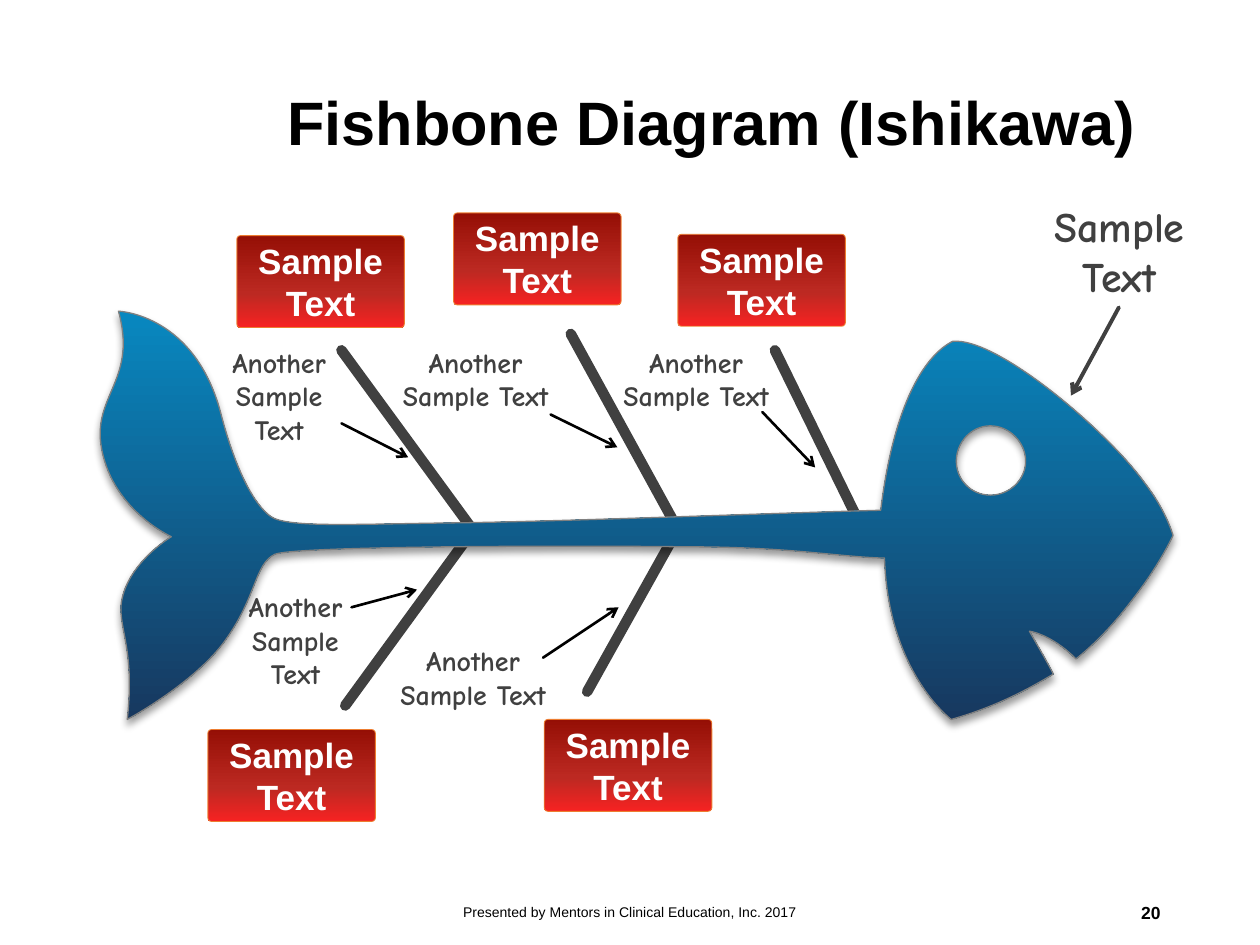
from typing import NamedTuple

from lxml import etree
from pptx import Presentation
from pptx.dml.color import RGBColor
from pptx.enum.shapes import MSO_CONNECTOR, MSO_SHAPE
from pptx.enum.text import MSO_ANCHOR, MSO_AUTO_SIZE, PP_ALIGN
from pptx.oxml.ns import qn
from pptx.util import Cm, Pt

STRAIGHT = MSO_CONNECTOR.STRAIGHT
ROUNDED = MSO_SHAPE.ROUNDED_RECTANGLE
TOP, MIDDLE = MSO_ANCHOR.TOP, MSO_ANCHOR.MIDDLE
LEFT, CENTER, RIGHT = PP_ALIGN.LEFT, PP_ALIGN.CENTER, PP_ALIGN.RIGHT
NO_AUTOFIT = MSO_AUTO_SIZE.NONE

CM_PER_INCH = 2.54
BLACK, WHITE, GREY = "000000", "FFFFFF", "404040"
HEADING_FONT, NOTE_FONT = "Arial", "Comic Neue"


class Stroke(NamedTuple):
    start: tuple
    end: tuple
    color: str = BLACK
    width: float = 1.5
    arrow: bool = True


class Cause(NamedTuple):
    left: float
    top: float
    width: float
    height: float
    arrow: Stroke


# Each outline: start point, then cubic curves as (control, control, end)
EYE = ((7.86, 3.38), [
    (7.71, 3.38, 7.59, 3.51, 7.59, 3.66), (7.59, 3.81, 7.71, 3.93, 7.86, 3.93),
    (8.01, 3.93, 8.14, 3.81, 8.14, 3.66), (8.14, 3.51, 8.01, 3.38, 7.86, 3.38)])
BODY = ((0.94, 2.47), [
    (0.94, 2.47, 1.56, 2.49, 1.76, 3.31), (1.87, 3.72, 2.01, 4, 2.15, 4.1),
    (2.28, 4.19, 2.8, 4.16, 3.61, 4.15), (4.42, 4.14, 6.22, 4.07, 6.99, 4.05),
    (7.1, 3.16, 7.36, 2.81, 7.56, 2.71), (7.91, 2.67, 8.8, 3.43, 9.09, 3.84),
    (9.26, 4.06, 9.31, 4.25, 9.31, 4.25), (9.31, 4.25, 9.21, 4.47, 9.01, 4.73),
    (8.89, 4.89, 8.74, 5.07, 8.54, 5.23), (8.34, 5.03, 8.17, 5.01, 8.17, 5.01),
    (8.17, 5.01, 8.31, 5.25, 8.36, 5.35), (8.13, 5.49, 7.87, 5.62, 7.55, 5.71),
    (7.55, 5.71, 7.05, 5.34, 7.02, 4.43), (6.65, 4.42, 6.27, 4.34, 5.46, 4.34),
    (4.65, 4.33, 2.34, 4.33, 2.18, 4.4), (2.02, 4.48, 2.04, 4.73, 1.79, 5.08),
    (1.55, 5.42, 1.01, 5.71, 1.01, 5.71), (1.07, 5.18, 0.95, 5, 0.96, 4.81),
    (0.99, 4.48, 1.36, 4.26, 1.36, 4.26), (1.36, 4.26, 0.87, 4.04, 0.8, 3.52),
    (0.75, 3.13, 1.09, 3, 0.94, 2.47)])

BONES = [((6.15, 2.78), (6.88, 4.27)), ((4.53, 2.65), (5.38, 4.2)),
         ((2.71, 2.78), (3.8, 4.27)), ((4.66, 5.49), (5.38, 4.2)),
         ((2.74, 5.6), (3.71, 4.27))]
CAUSES = [
    Cause(3.16, 2.74, 1.23, 0.54, Stroke((4.37, 3.29), (4.9, 3.55))),
    Cause(4.91, 2.74, 1.23, 0.54, Stroke((6.05, 3.27), (6.47, 3.71))),
    Cause(1.72, 2.74, 0.99, 0.81, Stroke((2.71, 3.36), (3.24, 3.63))),
    Cause(3.14, 5.11, 1.23, 0.54, Stroke((4.31, 5.22), (4.91, 4.82))),
    Cause(1.85, 4.68, 0.99, 0.81, Stroke((2.79, 4.82), (3.31, 4.68)))]
CATEGORY_CORNERS = [(1.88, 1.87), (3.6, 1.69), (5.38, 1.86), (1.65, 5.79), (4.32, 5.71)]
CATEGORY_SIZE = (1.33, 0.73)
RED_STOPS = [(0, "950F05"), (63, "BC2922"), (100, "F62222")]
BLUE_STOPS = [(0, "0888C0"), (100, "17385F")]


def lengths(*inches: float) -> list:
    return [Cm(value * CM_PER_INCH) for value in inches]


def rgb(value: str) -> RGBColor:
    return RGBColor.from_string(value)


def write(shape, text: str, *, size: float, color: str = BLACK, font: str = HEADING_FONT,
          bold: bool = False, align=CENTER, anchor=TOP, inset=None, spacing=None) -> None:
    frame = shape.text_frame
    frame.word_wrap = True
    frame.auto_size = NO_AUTOFIT
    frame.vertical_anchor = anchor
    if inset is not None:
        frame.margin_left = frame.margin_right = Cm(inset)
        frame.margin_top = frame.margin_bottom = Cm(inset)
    frame.text = text
    for paragraph in frame.paragraphs:
        paragraph.alignment = align
        if spacing:
            paragraph.line_spacing = spacing
        for run in paragraph.runs:
            run.font.name, run.font.size = font, Pt(size)
            run.font.bold, run.font.color.rgb = bold, rgb(color)


def add_label(slide, text: str, box: tuple, **text_format) -> None:
    write(slide.shapes.add_textbox(*lengths(*box)), text, **text_format)


def add_stroke(slide, stroke: Stroke) -> None:
    connector = slide.shapes.add_connector(STRAIGHT, *lengths(*stroke.start, *stroke.end))
    connector.line.color.rgb = rgb(stroke.color)
    connector.line.width = Pt(stroke.width)
    properties = connector.element.spPr
    outline = properties.find(qn("a:ln"))
    outline.set("cap", "rnd")
    if stroke.arrow:
        etree.SubElement(outline, qn("a:tailEnd"), type="arrow")
    etree.SubElement(properties, qn("a:effectLst"))


def paint(shape, stops: list, line_color: str, line_width: float) -> None:
    """Fill with a top-to-bottom gradient, outline, and drop the theme shadow."""
    shape.fill.gradient()
    shape.fill.gradient_angle = 270
    stop_list = shape.element.spPr.find(".//" + qn("a:gsLst"))
    for old_stop in list(stop_list):
        stop_list.remove(old_stop)
    for percent, color in stops:
        stop = etree.SubElement(stop_list, qn("a:gs"), pos=str(percent * 1000))
        etree.SubElement(stop, qn("a:srgbClr"), val=color)
    shape.line.color.rgb = rgb(line_color)
    shape.line.width = Pt(line_width)
    shape.shadow.inherit = False


def bend_segments(shape, curves: list) -> None:
    """Turn each straight segment of a freeform into its cubic curve."""
    segments = list(shape.element.spPr.iter(qn("a:lnTo")))
    for segment, curve in zip(segments, curves):
        segment.tag = qn("a:cubicBezTo")
        segment.clear()
        for x, y in zip(lengths(*curve[::2]), lengths(*curve[1::2])):
            etree.SubElement(segment, qn("a:pt"), x=str(x - shape.left),
                             y=str(y - shape.top))


def add_fish(slide) -> None:
    builder = slide.shapes.build_freeform(*lengths(*EYE[0]))
    for start, curves in (EYE, BODY):
        if start != EYE[0]:
            builder.move_to(*lengths(*start))
        builder.add_line_segments([lengths(*curve[4:]) for curve in curves], close=True)
    fish = builder.convert_to_shape()
    bend_segments(fish, EYE[1] + BODY[1])
    paint(fish, BLUE_STOPS, "808080", 0)
    effects = fish.element.spPr.find(qn("a:effectLst"))
    shadow = etree.SubElement(effects, qn("a:outerShdw"), blurRad=str(Pt(4)),
                              dist=str(Pt(3)), dir="5400000", rotWithShape="0")
    shade = etree.SubElement(shadow, qn("a:srgbClr"), val=BLACK)
    etree.SubElement(shade, qn("a:alpha"), val="40000")


def add_category(slide, corner: tuple) -> None:
    category = slide.shapes.add_shape(ROUNDED, *lengths(*corner, *CATEGORY_SIZE))
    category.adjustments[0] = 0.04
    paint(category, RED_STOPS, "ED7D31", 0.5)
    write(category, "Sample\nText", size=20, color=WHITE, bold=True, anchor=MIDDLE)


def main() -> None:
    deck = Presentation()
    deck.slide_width, deck.slide_height = lengths(10, 7.5)
    slide = deck.slides.add_slide(deck.slide_layouts[5])

    # Title
    title = slide.shapes.title
    title.left, title.top, title.width, title.height = lengths(2.18, 0.27, 7.14, 1.45)
    write(title, "Fishbone Diagram (Ishikawa)", size=35, bold=True, align=LEFT,
          anchor=MIDDLE, spacing=0.9)

    # Fish skeleton: bones lie behind the body
    for start, end in BONES:
        add_stroke(slide, Stroke(start, end, GREY, 6, arrow=False))
    add_fish(slide)

    # Causes beside the bones
    for cause in CAUSES:
        add_label(slide, "Another Sample Text", cause[:4], size=16, color=GREY,
                  font=NOTE_FONT, bold=True, inset=0)
        add_stroke(slide, cause.arrow)

    # Effect at the head
    add_label(slide, "Sample Text", (8.07, 1.54, 1.63, 0.9), size=24, color=GREY,
              font=NOTE_FONT, bold=True)
    add_stroke(slide, Stroke((8.88, 2.44), (8.5, 3.14), GREY, 2.25))

    # Categories at the bone ends
    for corner in CATEGORY_CORNERS:
        add_category(slide, corner)

    # Footer
    add_label(slide, "20", (7.06, 7.04, 2.25, 0.4), size=10, bold=True, align=RIGHT,
              anchor=MIDDLE)
    add_label(slide, "Presented by Mentors in Clinical Education, Inc. 2017",
              (3.31, 7.04, 3.38, 0.4), size=8, anchor=MIDDLE)

    deck.save("out.pptx")


if __name__ == "__main__":
    main()
